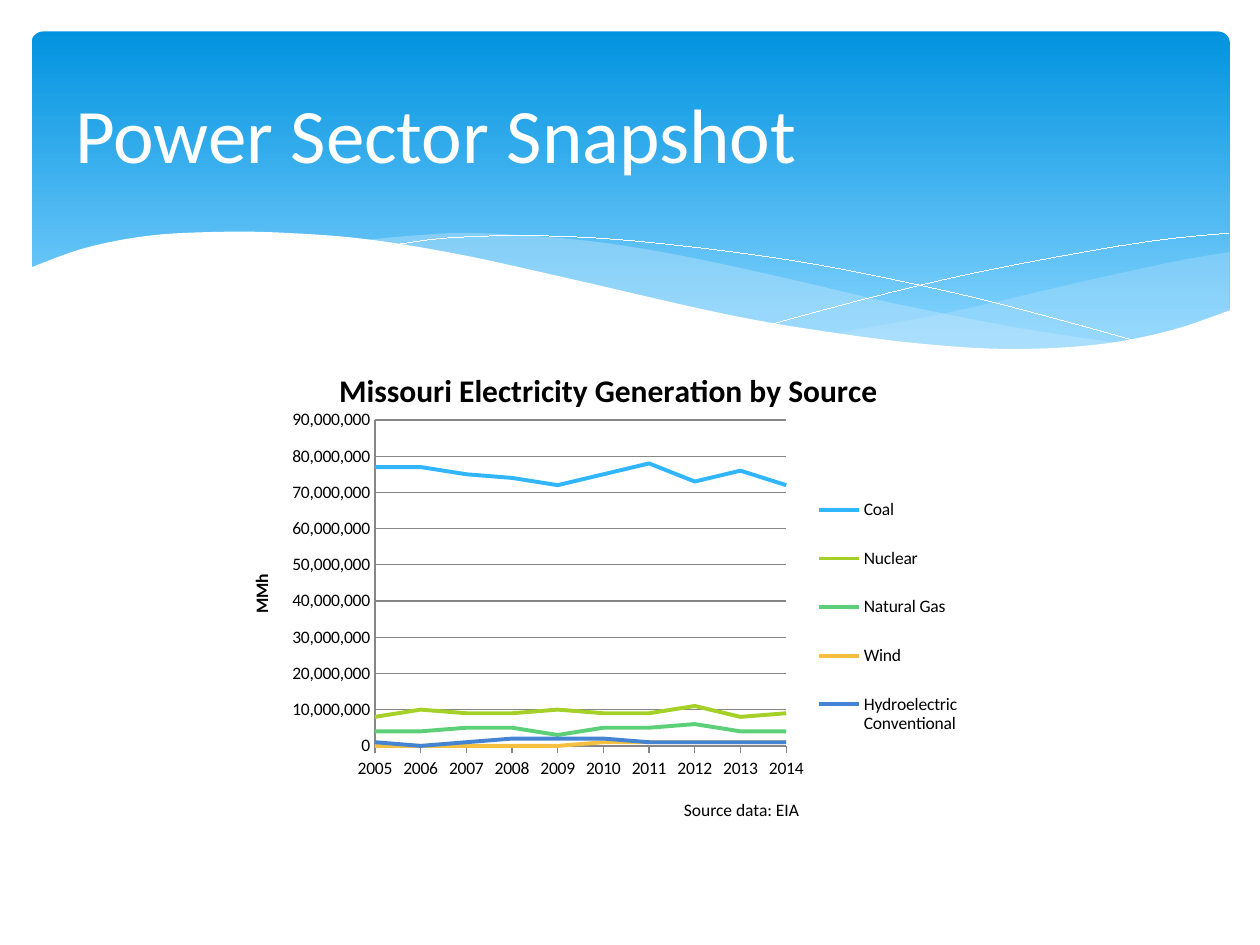
import pptx
import pptx.chart.data
import pptx.dml.color
import pptx.enum.chart
import pptx.enum.shapes
import pptx.enum.text
import pptx.oxml
import pptx.oxml.ns
import pptx.util

COLUMNS, ROWS = 10, 7.5
UNIT = pptx.util.Inches(1)
HAIRLINE = pptx.util.Emu(1)
FONT = "Calibri"
HEADER_BOX = (0.25, 0.25, 9.51, 2.7)
TITLE_BOX = (0.5, 0.37, 9, 1.37)
CHART_BOX = (1.83, 2.75, 6, 3.67)
SOURCE_BOX = (5.33, 6.29, 1.17, 0.27)

RIGHT_WAVE = [
    [(9.51, 1.75), (9.1, 1.82), (8.36, 1.98), (7.28, 2.23), (6.36, 2.4)],
    [(6.36, 2.4), (7.07, 2.49), (7.89, 2.53), (8.56, 2.48), (9.1, 2.37), (9.51, 2.22)],
]
MIDDLE_WAVE = [
    [(8.68, 2.48), (7.82, 2.35), (6.81, 2.15), (6.04, 1.97), (5.16, 1.78),
     (4.4, 1.66), (3.55, 1.6), (3.03, 1.62), (2.61, 1.66)],
    [(2.61, 1.66), (3.37, 1.78), (4.24, 1.97), (5.05, 2.15), (5.93, 2.33),
     (6.84, 2.47), (7.6, 2.53), (8.13, 2.53), (8.68, 2.48)],
]
FALLING_LINE = [
    [(2.84, 1.7), (3.28, 1.64), (3.91, 1.62), (4.64, 1.65), (5.57, 1.75),
     (6.4, 1.88), (7.35, 2.08), (8.06, 2.26), (8.82, 2.47)],
]
RISING_LINE = [
    [(5.88, 2.32), (6.7, 2.1), (7.51, 1.91), (8.41, 1.74), (8.99, 1.65), (9.5, 1.6)],
]
WHITE_WAVE = [
    [(9.52, 2.21), (9.05, 2.37), (8.5, 2.48), (7.84, 2.52), (7.19, 2.49),
     (6.43, 2.4), (5.54, 2.25), (4.22, 1.95), (3.4, 1.77), (2.67, 1.65),
     (2.05, 1.6), (1.52, 1.59), (0.94, 1.62), (0.42, 1.72), (-0.02, 1.88)],
    [(-0.02, 3.04), (9.52, 3.04)],
]

YEARS = [str(year) for year in range(2005, 2015)]
GENERATION = [
    ("Coal", "31B6FD", [77, 77, 75, 74, 72, 75, 78, 73, 76, 72]),
    ("Nuclear", "A5D028", [8, 10, 9, 9, 10, 9, 9, 11, 8, 9]),
    ("Natural Gas", "5BD078", [4, 4, 5, 5, 3, 5, 5, 6, 4, 4]),
    ("Wind", "F5C040", [0, 0, 0, 0, 0, 1, 1, 1, 1, 1]),
    ("Hydroelectric Conventional", "4584D3", [1, 0, 1, 2, 2, 2, 1, 1, 1, 1]),
]


def color(value):
    """Turn a hex string into a colour."""
    return pptx.dml.color.RGBColor.from_string(value)


def apply(target, **values):
    """Set each named attribute on the target."""
    for name, value in values.items():
        setattr(target, name, value)


def place(box):
    """Turn a box in columns and rows into slide lengths."""
    return [round(length * UNIT) for length in box]


def style_font(font, size, shade="000000", bold=False):
    """Give a font its face, size, weight and colour."""
    apply(font, name=FONT, size=pptx.util.Pt(size), bold=bold)
    font.color.rgb = color(shade)


def smooth(knots, steps=6):
    """Return points of a smooth curve through the knots."""
    padded = [knots[0], *knots, knots[-1]]
    points = [knots[0]]
    for before, start, end, after in zip(padded, padded[1:], padded[2:], padded[3:]):
        for step in range(1, steps + 1):
            t = step / steps
            points.append(tuple(
                b + (c - a) * t / 2 + (2 * a - 5 * b + 4 * c - d) * t**2 / 2
                + (3 * b - a - 3 * c + d) * t**3 / 2
                for a, b, c, d in zip(before, start, end, after)))
    return points


def add_wave(page, box, edges, fill=None, opacity=100):
    """Draw a filled wave, or a thin white curve if no fill is given."""
    points = [place((box[0] + x, box[1] + y))
              for edge in edges for x, y in (smooth(edge) if len(edge) > 2 else edge)]
    builder = page.shapes.build_freeform(*points[0])
    builder.add_line_segments(points[1:], close=fill is not None)
    wave = builder.convert_to_shape()
    wave.shadow.inherit = False
    if fill is None:
        wave.fill.background()
        wave.line.color.rgb = color("FFFFFF")
        wave.line.width = HAIRLINE
        return
    wave.line.fill.background()
    wave.fill.solid()
    wave.fill.fore_color.rgb = color(fill)
    if opacity < 100:
        shade = wave.fill._xPr.find(".//" + pptx.oxml.ns.qn("a:srgbClr"))
        alpha = shade.makeelement(pptx.oxml.ns.qn("a:alpha"), {"val": str(opacity * 1000)})
        shade.append(alpha)


def add_header(page, box):
    """Draw the blue panel with its waves."""
    panel = page.shapes.add_shape(
        pptx.enum.shapes.MSO_SHAPE.ROUNDED_RECTANGLE, *place(box))
    panel.adjustments[0] = 0.034
    panel.shadow.inherit = False
    panel.line.fill.background()
    panel.fill.gradient()
    panel.fill.gradient_angle = 270
    for stop, (position, shade) in zip(
            panel.fill.gradient_stops, [(0, "0293E0"), (0.9, "83D3FE")]):
        stop.position = position
        stop.color.rgb = color(shade)
    add_wave(page, box, RIGHT_WAVE, "C6E7FC", 29)
    add_wave(page, box, MIDDLE_WAVE, "C6E7FC", 40)
    add_wave(page, box, FALLING_LINE)
    add_wave(page, box, RISING_LINE)
    add_wave(page, box, WHITE_WAVE, "FFFFFF")


def add_text(page, box, text, size, shade, anchor):
    """Place one line of text in the box."""
    frame = page.shapes.add_textbox(*place(box)).text_frame
    apply(frame, word_wrap=True, vertical_anchor=anchor)
    span = frame.paragraphs[0].add_run()
    span.text = text
    style_font(span.font, size, shade)


def set_layout(parent, index, shares, target=""):
    """Fix a chart part at shares of the chart's size."""
    for old in parent.findall(pptx.oxml.ns.qn("c:layout")):
        parent.remove(old)
    parts = "".join(f'<c:{mode}Mode val="edge"/>' for mode in "xy")
    parts += "".join(f'<c:{name} val="{share}"/>' for name, share in zip("xywh", shares))
    parent.insert(index, pptx.oxml.parse_xml(
        f'<c:layout {pptx.oxml.ns.nsdecls("c")}><c:manualLayout>{target}{parts}'
        "</c:manualLayout></c:layout>"))


def add_generation_chart(page, box):
    """Place the line chart of generation by source."""
    marks = pptx.enum.chart.XL_TICK_MARK
    data = pptx.chart.data.CategoryChartData(number_format="#,##0")
    data.categories = YEARS
    for name, _, millions in GENERATION:
        data.add_series(name, [value * 1_000_000 for value in millions])
    chart = page.shapes.add_chart(
        pptx.enum.chart.XL_CHART_TYPE.LINE, *place(box), data).chart
    style_font(chart.font, 10)
    chart.plots[0].vary_by_categories = False
    for series, (_, shade, _) in zip(chart.plots[0].series, GENERATION):
        series.smooth = False
        series.marker.style = pptx.enum.chart.XL_MARKER_STYLE.NONE
        series.format.line.width = pptx.util.Pt(2.25)
        series.format.line.color.rgb = color(shade)

    years, amounts = chart.category_axis, chart.value_axis
    apply(years, major_tick_mark=marks.OUTSIDE, minor_tick_mark=marks.NONE)
    apply(amounts, major_tick_mark=marks.NONE, minor_tick_mark=marks.NONE,
          minimum_scale=0, maximum_scale=90_000_000, major_unit=10_000_000,
          has_major_gridlines=True)
    apply(amounts.tick_labels, number_format="#,##0", number_format_is_linked=False)
    for line in (years.format.line, amounts.format.line, amounts.major_gridlines.format.line):
        line.width = pptx.util.Pt(0.75)
        line.color.rgb = color("868686")
    for owner, text, size in [(chart, "Missouri Electricity Generation by Source", 18),
                              (amounts, "MMh", 10)]:
        title = owner.chart_title if owner is chart else owner.axis_title
        title.text_frame.text = text
        style_font(title.text_frame.paragraphs[0].runs[0].font, size, bold=True)

    axis = amounts._element
    for old in axis.findall(pptx.oxml.ns.qn("c:crossBetween")):
        axis.remove(old)
    axis.find(pptx.oxml.ns.qn("c:crosses")).addnext(pptx.oxml.parse_xml(
        f'<c:crossBetween {pptx.oxml.ns.nsdecls("c")} val="midCat"/>'))
    chart.has_legend = True
    apply(chart.legend, position=pptx.enum.chart.XL_LEGEND_POSITION.RIGHT,
          include_in_layout=False)
    style_font(chart.legend.font, 10)
    set_layout(chart.legend._element, 1, (0.76, 0.27, 0.22, 0.63))
    set_layout(chart._chartSpace.chart.plotArea, 0, (0.191, 0.159, 0.544, 0.705),
               '<c:layoutTarget val="inner"/>')


def main():
    """Build and save the deck."""
    deck = pptx.Presentation()
    apply(deck, slide_width=COLUMNS * UNIT, slide_height=round(ROWS * UNIT))
    page = deck.slides.add_slide(deck.slide_layouts[6])
    anchors = pptx.enum.text.MSO_ANCHOR
    add_header(page, HEADER_BOX)
    add_text(page, TITLE_BOX, "Power Sector Snapshot", 44, "FFFFFF", anchors.MIDDLE)
    add_generation_chart(page, CHART_BOX)
    add_text(page, SOURCE_BOX, "Source data: EIA", 10, "000000", anchors.TOP)
    deck.save("out.pptx")


if __name__ == "__main__":
    main()
